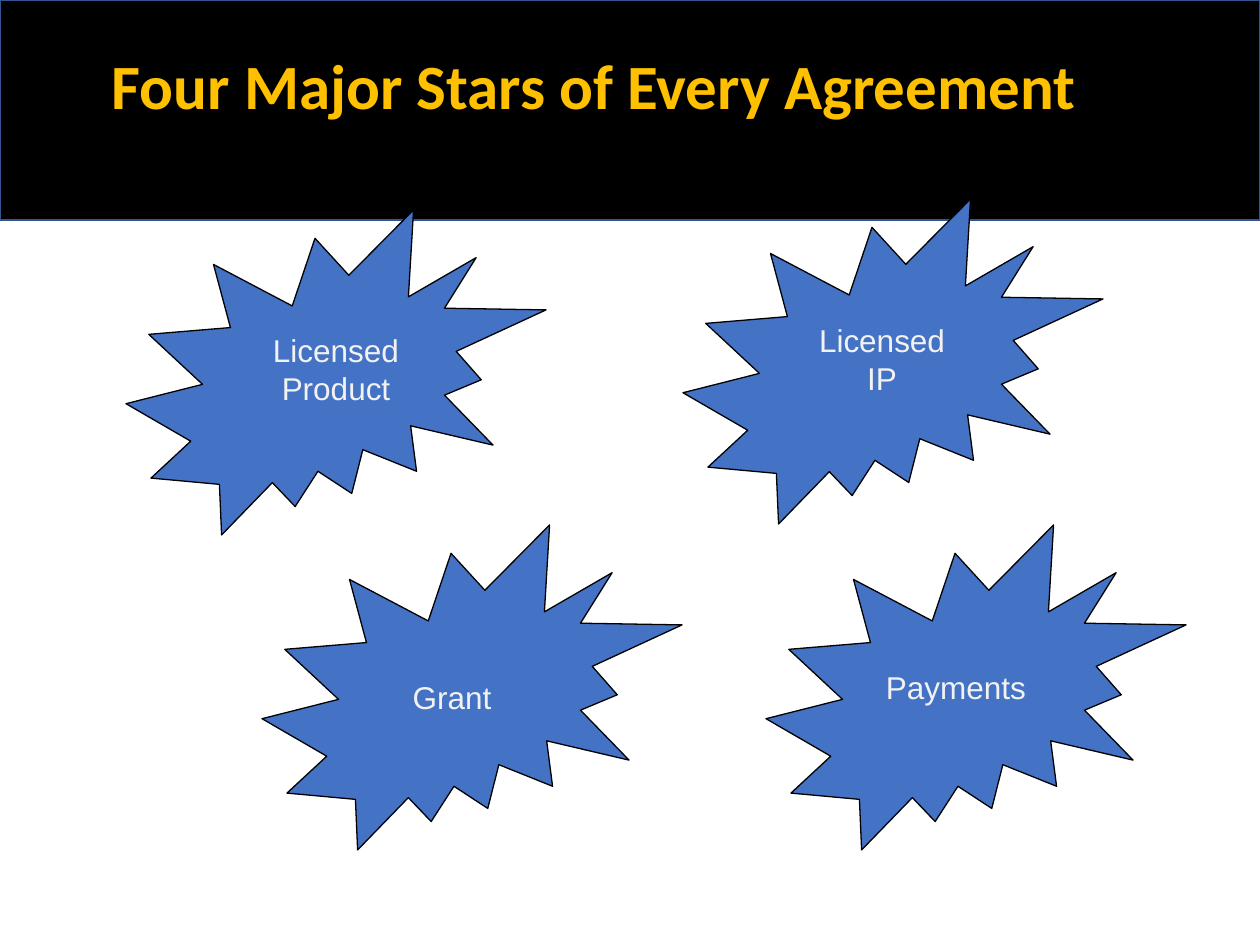
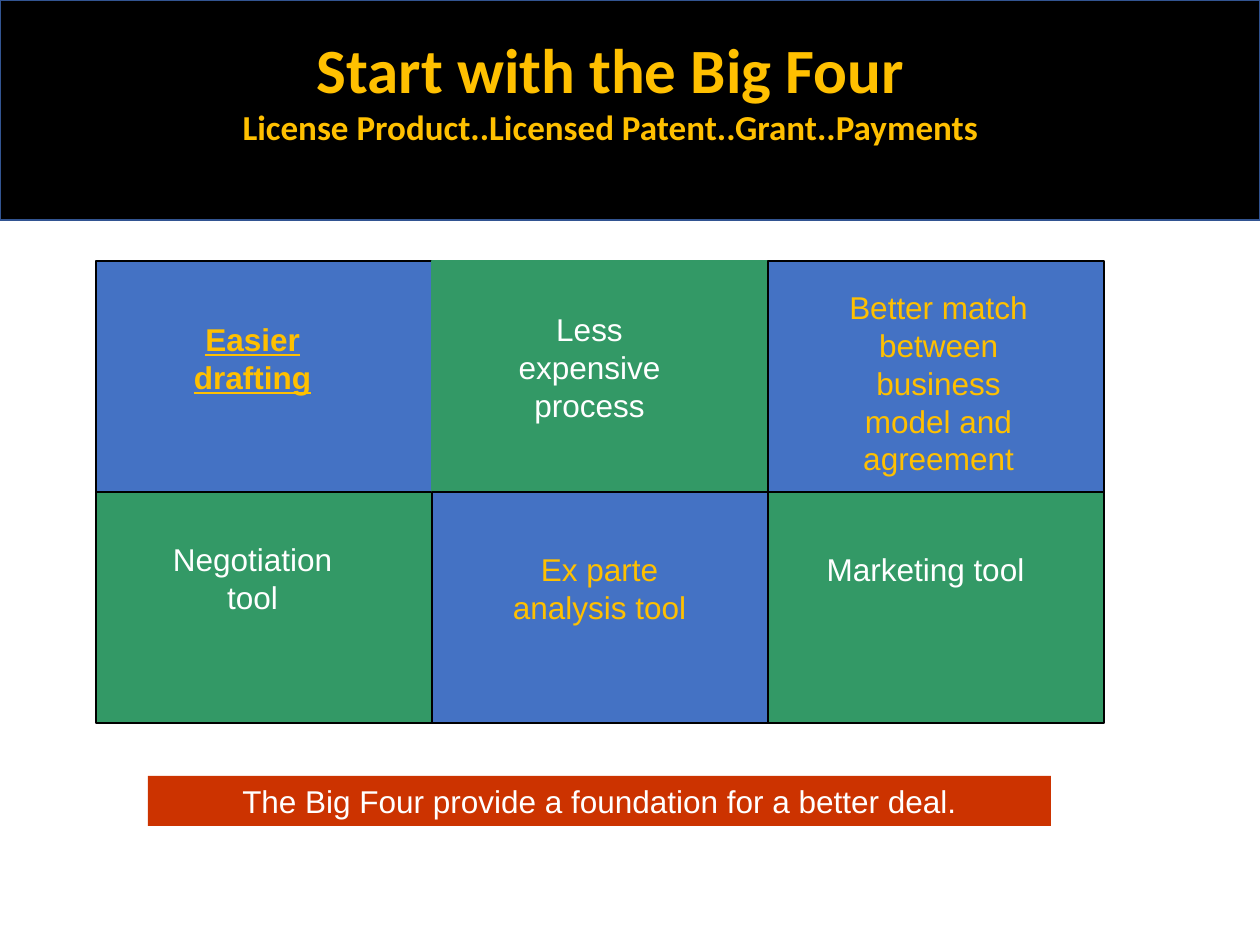
from pptx import Presentation
from pptx.dml.color import RGBColor
from pptx.enum.shapes import MSO_SHAPE as SHAPE
from pptx.enum.text import MSO_ANCHOR as ANCHOR, MSO_AUTO_SIZE as AUTO, PP_ALIGN as ALIGN
from pptx.util import Emu, Pt

PX_PER_INCH = 126
SLIDE_W, SLIDE_H = 1260, 945
BAND_H = 220
BLACK, WHITE, PALE = "000000", "FFFFFF", "F2F2F2"
BLUE, GREEN, GOLD, RED, NAVY = "4472C4", "339966", "FFC000", "CC3300", "325491"
STAR_W, STAR_H, STAR_LABEL_W = 420, 325, 168
GRID_LEFT, GRID_TOP, TILE_W, TILE_H = 96, 261, 336, 231
TILE_LABEL_W = 231


def px(n):
    """Turn pixels into EMU."""
    return Emu(round(n * 914400 / PX_PER_INCH))


def rgb(code):
    """Turn a hex string into a colour."""
    return RGBColor.from_string(code)


def add_block(shapes, kind, x, y, w, h, fill, line=None, weight=0.75):
    """Add a filled preset shape with an optional outline."""
    sp = shapes.add_shape(kind, px(x), px(y), px(w), px(h))
    sp.shadow.inherit = False
    sp.fill.solid()
    sp.fill.fore_color.rgb = rgb(fill)
    if line:
        sp.line.color.rgb = rgb(line)
        sp.line.width = Pt(weight)
    else:
        sp.line.fill.background()
    return sp


def write(sp, lines, color, font="Arial", bold=False, underline=False):
    """Write centred (text, size) lines into a shape, one paragraph each."""
    tf = sp.text_frame
    tf.word_wrap = True
    tf.auto_size = AUTO.SHAPE_TO_FIT_TEXT
    tf.vertical_anchor = ANCHOR.TOP
    for i, (text, size) in enumerate(lines):
        p = tf.add_paragraph() if i else tf.paragraphs[0]
        p.alignment = ALIGN.CENTER
        r = p.add_run()
        r.text = text
        r.font.name = font
        r.font.size = Pt(size)
        r.font.bold = bold
        r.font.underline = underline
        r.font.color.rgb = rgb(color)


def add_label(s, text, x, y, w, h, color, strong=False):
    """Add a body label, bold and underlined when strong."""
    tb = s.shapes.add_textbox(px(x), px(y), px(w), px(h))
    write(tb, [(text, 18)], color, bold=strong, underline=strong)


def add_titled_slide(prs, lines, x, y, w, h):
    """Add a blank slide with the black band and its gold title."""
    s = prs.slides.add_slide(prs.slide_layouts[6])
    add_block(s.shapes, SHAPE.RECTANGLE, 0, 0, SLIDE_W, BAND_H, BLACK, NAVY, 1)
    tb = s.shapes.add_textbox(px(x), px(y), px(w), px(h))
    write(tb, lines, GOLD, font="Calibri", bold=True)
    return s


def build_stars(prs):
    """Build the slide of four labelled stars."""
    s = add_titled_slide(prs, [("Four Major Stars of Every Agreement", 36)], 39, 40, 1110, 89)
    stars = [
        ("Licensed Product", (126, 210), (252, 325), 88),
        ("Licensed IP", (683, 199), (798, 315), 88),
        ("Grant", (262, 525), (368, 672), 50),
        ("Payments", (766, 525), (872, 662), 50),
    ]
    for _, (x, y), _, _ in stars:
        add_block(s.shapes, SHAPE.EXPLOSION2, x, y, STAR_W, STAR_H, BLUE, BLACK)
    for text, _, (x, y), h in stars:
        add_label(s, text, x, y, STAR_LABEL_W, h, PALE)


def build_benefits(prs):
    """Build the slide with the checkered grid of benefits."""
    title = [("Start with the Big Four", 36),
             ("License Product..Licensed Patent..Grant..Payments", 20)]
    s = add_titled_slide(prs, title, 88, 24, 1045, 131)
    benefits = [
        (0, 0, "Easier drafting", 137, 314, 89),
        (0, 1, "Negotiation tool", 137, 534, 89),
        (1, 0, "Less expensive process", 474, 304, 126),
        (2, 0, "Better match between business model and agreement", 823, 282, 204),
        (1, 1, "Ex parte analysis tool", 484, 544, 88),
        (2, 1, "Marketing tool", 810, 544, 50),
    ]
    grid = s.shapes.add_group_shape()
    for col, row, *_ in benefits:
        fill = GREEN if (col + row) % 2 else BLUE
        line = GREEN if (col, row) == (1, 0) else BLACK
        add_block(grid.shapes, SHAPE.RECTANGLE, GRID_LEFT + col * TILE_W,
                  GRID_TOP + row * TILE_H, TILE_W, TILE_H, fill, line)
    bar = add_block(s.shapes, SHAPE.RECTANGLE, 148, 776, 903, 50, RED)
    write(bar, [("The Big Four provide a foundation for a better deal.", 18)], WHITE)
    for col, row, text, x, y, h in benefits:
        color = WHITE if (col + row) % 2 else GOLD
        add_label(s, text, x, y, TILE_LABEL_W, h, color, strong=(col, row) == (0, 0))


def main():
    """Build and save the presentation."""
    prs = Presentation()
    prs.slide_width, prs.slide_height = px(SLIDE_W), px(SLIDE_H)
    build_stars(prs)
    build_benefits(prs)
    prs.save("out.pptx")


if __name__ == "__main__":
    main()
